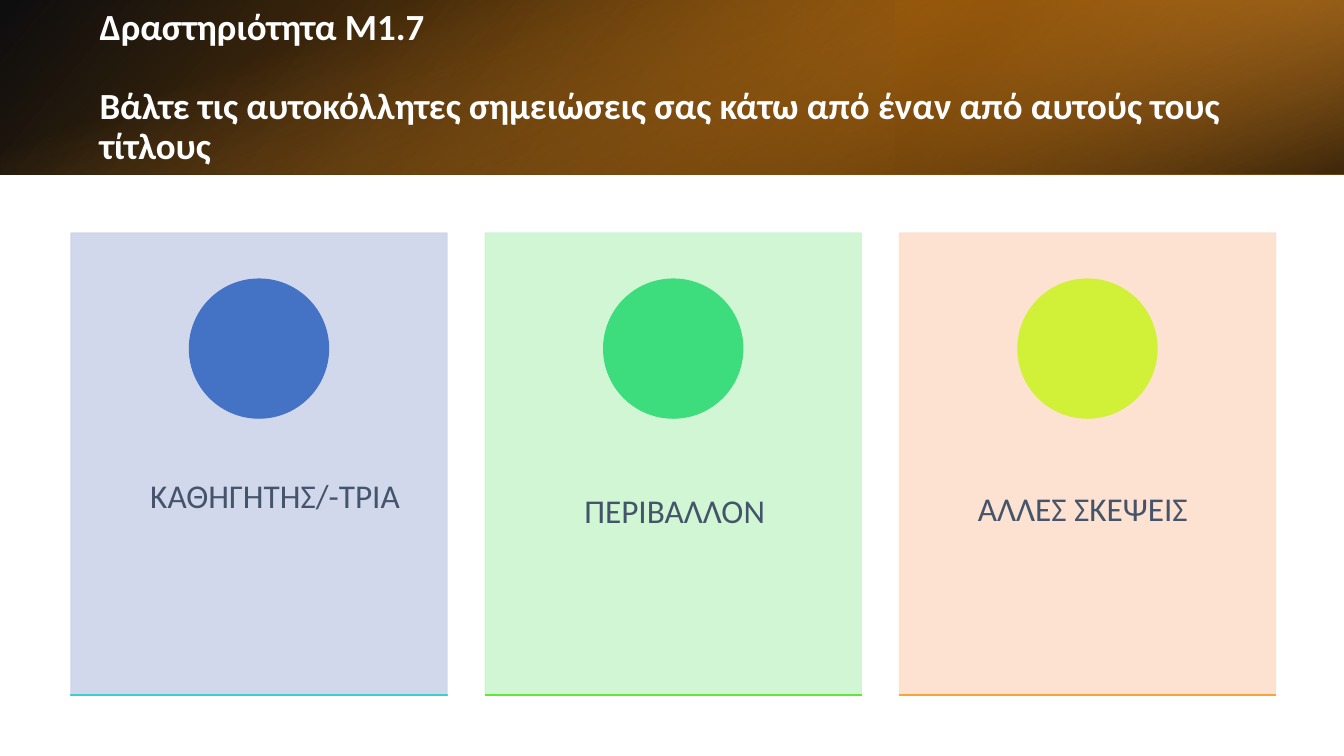
"""Build the M1.7 activity slide: a gradient title band above three cards."""
from lxml import etree
from pptx import Presentation
from pptx.dml.color import RGBColor
from pptx.enum.shapes import MSO_SHAPE
from pptx.enum.text import MSO_ANCHOR
from pptx.oxml.ns import qn
from pptx.util import Inches, Pt

RECT, OVAL = MSO_SHAPE.RECTANGLE, MSO_SHAPE.OVAL
TOP, MIDDLE = MSO_ANCHOR.TOP, MSO_ANCHOR.MIDDLE

SLIDE_W, SLIDE_H = Pt(1050), Pt(591)
BAND_W, BAND_H = SLIDE_W.inches, 1.89
TITLE = ["Δραστηριότητα M1.7",
         "Βάλτε τις αυτοκόλλητες σημειώσεις σας κάτω από έναν από αυτούς τους τίτλους"]
BAND = [
    dict(box=(0, 0, BAND_W, BAND_H), angle=140, flip=True,
         stops=[(0, "000000", 95), (100, "DF7E06", 100)]),
    dict(box=(BAND_W * 2 / 3, 0, BAND_W / 3, BAND_H), angle=320, flip=True, rotation=180,
         stops=[(0, "955404", 67), (19, "955404", 67), (100, "FAA337", 78)]),
    dict(box=((BAND_W - BAND_H) / 2, (BAND_H - BAND_W) / 2, BAND_H, BAND_W),
         angle=340, rotation=90,
         stops=[(0, "FAA337", 0), (23, "FAA337", 0), (99, "000000", 73), (100, "000000", 73)]),
]
CARDS = [
    dict(label="ΚΑΘΗΓΗΤΗΣ/-ΤΡΙΑ", at=(0.74, 5.01), inset=0.89,
         card="CDD4EA", dot="4472C4", rule="40CDD0"),
    dict(label="ΠΕΡΙΒΑΛΛΟΝ", at=(5.45, 5.18), inset=0.89,
         card="CCF5CE", dot="3DDC7D", rule="5FE73A"),
    dict(label="ΑΛΛΕΣ ΣΚΕΨΕΙΣ", at=(10.13, 5.16), inset=0.48,
         card="FDDFCC", dot="D1F138", rule="FAA337"),
]
CARD_X, LAST_CARD_X, CARD_Y, CARD_W, CARD_H = 0.77, 9.76, 2.53, 4.08, 5.02
CARD_PITCH = (LAST_CARD_X - CARD_X) / (len(CARDS) - 1)
DOT, DOT_Y, RULE_Y, RULE_H = 1.51, 3.03, 7.54, 0.01


def rgb(value):
    return RGBColor.from_string(value)


def add_alpha(color, percent):
    etree.SubElement(color, qn("a:alpha")).set("val", str(percent * 1000))


def add_shape(s, kind, box, color=None, opacity=100):
    sp = s.shapes.add_shape(kind, *map(Inches, box))
    sp.shadow.inherit = False
    if color is None:
        sp.line.fill.background()
        return sp
    sp.fill.solid()
    sp.fill.fore_color.rgb = rgb(color)
    sp.line.color.rgb = rgb(color)
    sp.line.width = Pt(1)
    if opacity < 100:
        for clr in sp.element.spPr.iter(qn("a:srgbClr")):
            add_alpha(clr, opacity)
    return sp


def add_gradient(s, box, stops, angle, rotation=0, flip=False):
    sp = add_shape(s, RECT, box)
    sp.rotation = rotation
    spPr = sp.element.spPr
    if flip:
        spPr.find(qn("a:xfrm")).set("flipH", "1")
    grad = etree.Element(qn("a:gradFill"), rotWithShape="1")
    stop_list = etree.SubElement(grad, qn("a:gsLst"))
    for position, color, opacity in stops:
        stop = etree.SubElement(stop_list, qn("a:gs"), pos=str(position * 1000))
        add_alpha(etree.SubElement(stop, qn("a:srgbClr"), val=color), opacity)
    etree.SubElement(grad, qn("a:lin"), ang=str(angle * 60000), scaled="0")
    spPr.find(qn("a:prstGeom")).addnext(grad)


def add_text(s, box, lines, size, color, bold=False, anchor=TOP, inset=0.05, left=0.05, gap=0):
    tf = s.shapes.add_textbox(*map(Inches, box)).text_frame
    tf.word_wrap = True
    tf.vertical_anchor = anchor
    tf.margin_top = tf.margin_right = tf.margin_bottom = Inches(inset)
    tf.margin_left = Inches(left)
    for i, line in enumerate(lines):
        p = tf.add_paragraph() if i else tf.paragraphs[0]
        p.line_spacing = 0.9
        if i:
            p.space_before = Pt(gap)
        r = p.add_run()
        r.text = line
        r.font.name = "Calibri"
        r.font.size = Pt(size)
        r.font.bold = bold
        r.font.color.rgb = rgb(color)


def main():
    prs = Presentation()
    prs.slide_width, prs.slide_height = SLIDE_W, SLIDE_H
    s = prs.slides.add_slide(prs.slide_layouts[6])
    for layer in BAND:
        add_gradient(s, **layer)
    add_text(s, (1.03, 0.43, 12.62, 1.05), TITLE, 28.8, "FFFFFF",
             bold=True, anchor=MIDDLE, gap=31)
    for i, c in enumerate(CARDS):
        x = CARD_X + i * CARD_PITCH
        add_shape(s, RECT, (x, CARD_Y, CARD_W, CARD_H), c["card"], opacity=89)
        add_text(s, (*c["at"], CARD_W, 1.04), [c["label"]], 26, "44546A",
                 inset=0.32, left=c["inset"])
        add_shape(s, OVAL, (x + (CARD_W - DOT) / 2, DOT_Y, DOT, DOT), c["dot"])
        add_shape(s, RECT, (x, RULE_Y, CARD_W, RULE_H), c["rule"])
    prs.save("out.pptx")


if __name__ == "__main__":
    main()
